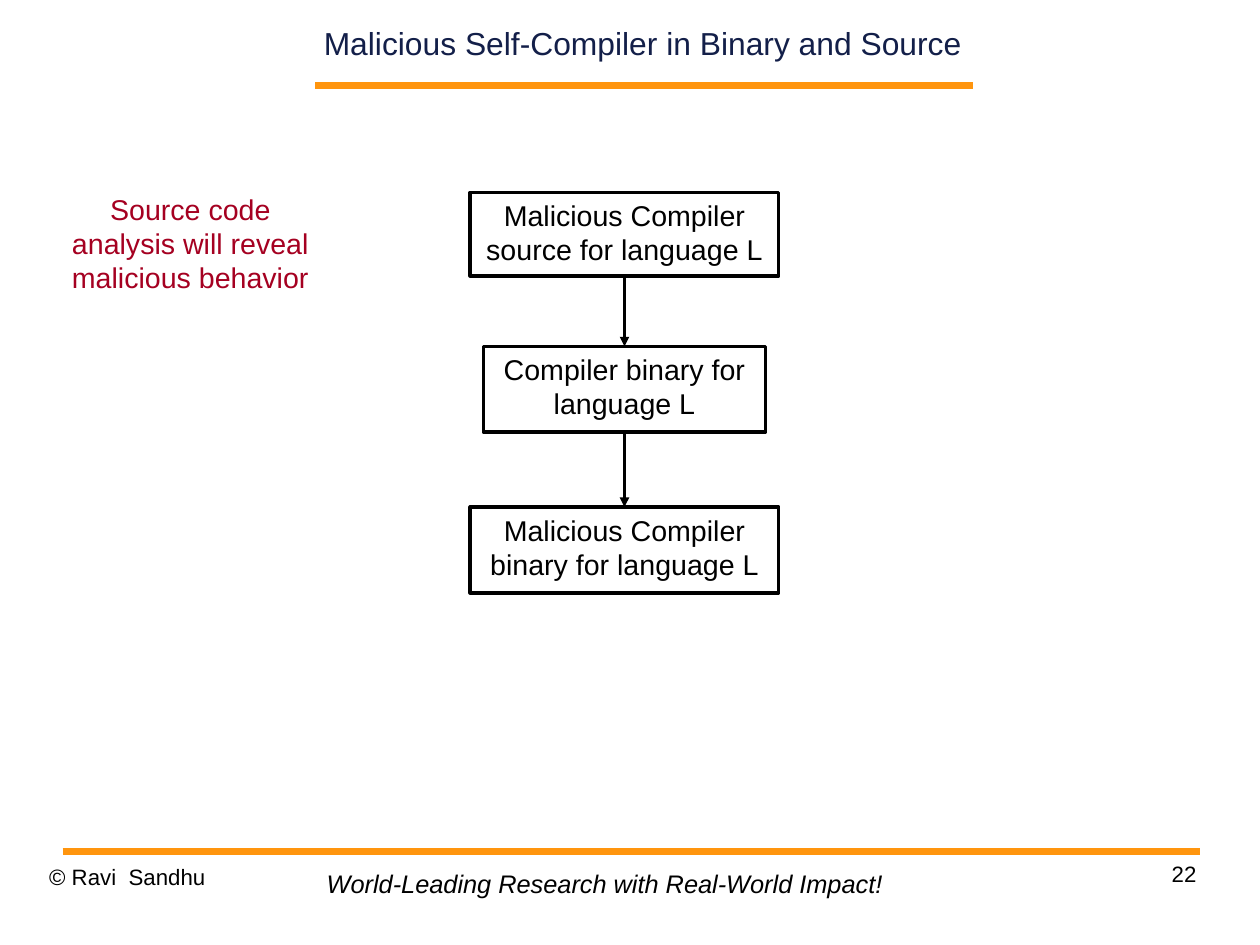
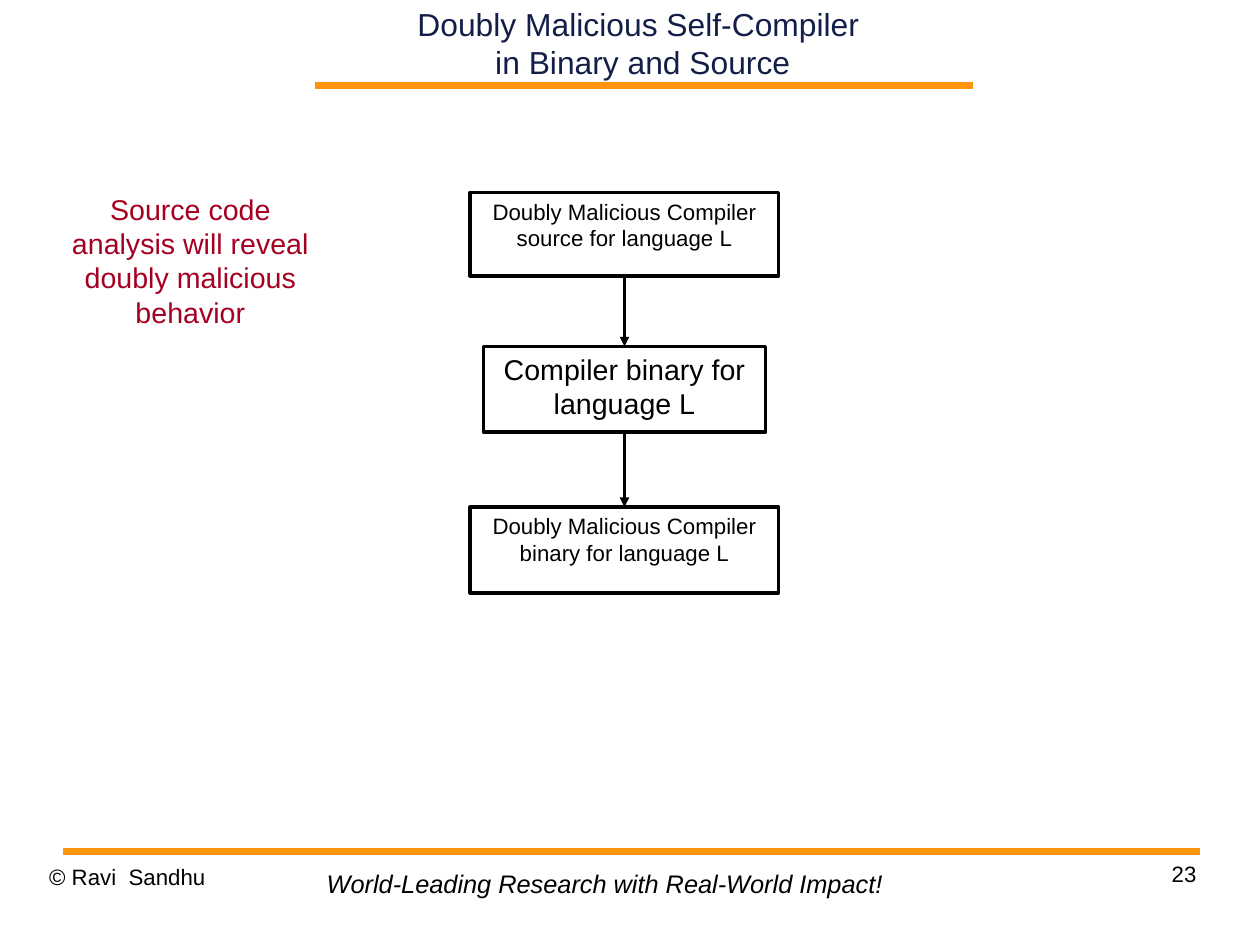
"""Build two slides on malicious self-compilers, with a shared title, rule and footer style."""
from lxml import etree
from pptx import Presentation
from pptx.dml.color import RGBColor
from pptx.enum import shapes, text
from pptx.oxml.ns import qn
from pptx.util import Pt

FONT = "Arial"
BLACK, NAVY, ORANGE, RED = "000000", "131F49", "FF950E", "A50021"
LEFT, CENTER, RIGHT = text.PP_ALIGN.LEFT, text.PP_ALIGN.CENTER, text.PP_ALIGN.RIGHT
TOP, MIDDLE = text.MSO_ANCHOR.TOP, text.MSO_ANCHOR.MIDDLE

SLIDES = [
    {
        "number": 22,
        "title": "Malicious Self-Compiler in Binary and Source",
        "note": "Source code analysis will reveal malicious behavior",
        "note_height": 72.7,
        "steps": [
            ("Malicious Compiler source for language L", 18),
            ("Compiler binary for language L", 18),
            ("Malicious Compiler binary for language L", 18),
        ],
    },
    {
        "number": 23,
        "title": "Doubly Malicious Self-Compiler \nin Binary and Source",
        "note": "Source code analysis will reveal doubly malicious behavior",
        "note_height": 94.3,
        "steps": [
            ("Doubly Malicious Compiler source for language L", 14),
            ("Compiler binary for language L", 18),
            ("Doubly Malicious Compiler binary for language L", 14),
        ],
    },
]
RULES = [(198.7, 612.7, 54), (39.4, 755.8, 536.2)]
FLOW_CENTER = 393.4
STEP_FRAMES = [(121.2, 194.4, 52.6), (218.2, 177.8, 54), (319.4, 194.4, 54)]


def color(value):
    return RGBColor.from_string(value)


def place(shape, left, top, width, height):
    shape.left, shape.top = Pt(left), Pt(top)
    shape.width, shape.height = Pt(width), Pt(height)


def write(shape, words, size, ink=BLACK, align=CENTER, anchor=TOP,
          inset=True, wrap=True, italic=False):
    frame = shape.text_frame
    frame.text = words
    frame.word_wrap = wrap
    frame.auto_size = text.MSO_AUTO_SIZE.NONE
    frame.vertical_anchor = anchor
    if not inset:
        frame.margin_left = frame.margin_right = 0
        frame.margin_top = frame.margin_bottom = 0
    for para in frame.paragraphs:
        para.alignment = align
        for span in para.runs:
            span.font.name, span.font.size = FONT, Pt(size)
            span.font.italic = italic
            span.font.color.rgb = color(ink)


def add_text(page, frame, words, size, **style):
    box = page.shapes.add_textbox(*map(Pt, frame))
    write(box, words, size, **style)


def add_line(page, start, end, ink, weight, arrow=False):
    line = page.shapes.add_connector(
        shapes.MSO_CONNECTOR.STRAIGHT, *map(Pt, (*start, *end)))
    line.line.color.rgb = color(ink)
    line.line.width = Pt(weight)
    if arrow:
        etree.SubElement(line.line._get_or_add_ln(), qn("a:tailEnd"), type="triangle")
    etree.SubElement(line._element.spPr, qn("a:effectLst"))
    return line


def add_step(page, frame, words, size):
    top, width, height = frame
    box = page.shapes.add_shape(
        shapes.MSO_SHAPE.RECTANGLE,
        *map(Pt, (FLOW_CENTER - width / 2, top, width, height)))
    box.shadow.inherit = False
    box.fill.background()
    box.line.color.rgb = color(BLACK)
    box.line.width = Pt(2.25)
    write(box, words, size)
    return box


def add_flow(page, steps):
    boxes = [add_step(page, frame, *step) for frame, step in zip(STEP_FRAMES, steps)]
    for upper, lower in zip(boxes, boxes[1:]):
        arrow = add_line(page, (0, 0), (0, 0), BLACK, 2, arrow=True)
        arrow.begin_connect(upper, 2)
        arrow.end_connect(lower, 0)


def add_page(deck, title, number):
    page = deck.slides.add_slide(deck.slide_layouts[5])
    place(page.shapes.title, 173.5, 0, 463, 54)
    write(page.shapes.title, title, 20, ink=NAVY, anchor=MIDDLE, inset=False)
    for left, right, top in RULES:
        add_line(page, (left, top), (right, top), ORANGE, 4.31)
    add_text(page, (31, 543.6, 185, 41), "© Ravi  Sandhu", 14, align=LEFT, inset=False)
    add_text(page, (568.8, 542.2, 185, 41), str(number), 14, align=RIGHT, inset=False)
    add_text(page, (198.7, 543.6, 365.8, 26.6),
             "World-Leading Research with Real-World Impact!", 16,
             align=LEFT, wrap=False, italic=True)
    return page


def main():
    deck = Presentation()
    deck.slide_width, deck.slide_height = Pt(793.75), Pt(595.25)
    for content in SLIDES:
        page = add_page(deck, content["title"], content["number"])
        add_flow(page, content["steps"])
        add_text(page, (32.4, 117.2, 175, content["note_height"]),
                 content["note"], 18, ink=RED)
    deck.save("out.pptx")


if __name__ == "__main__":
    main()
